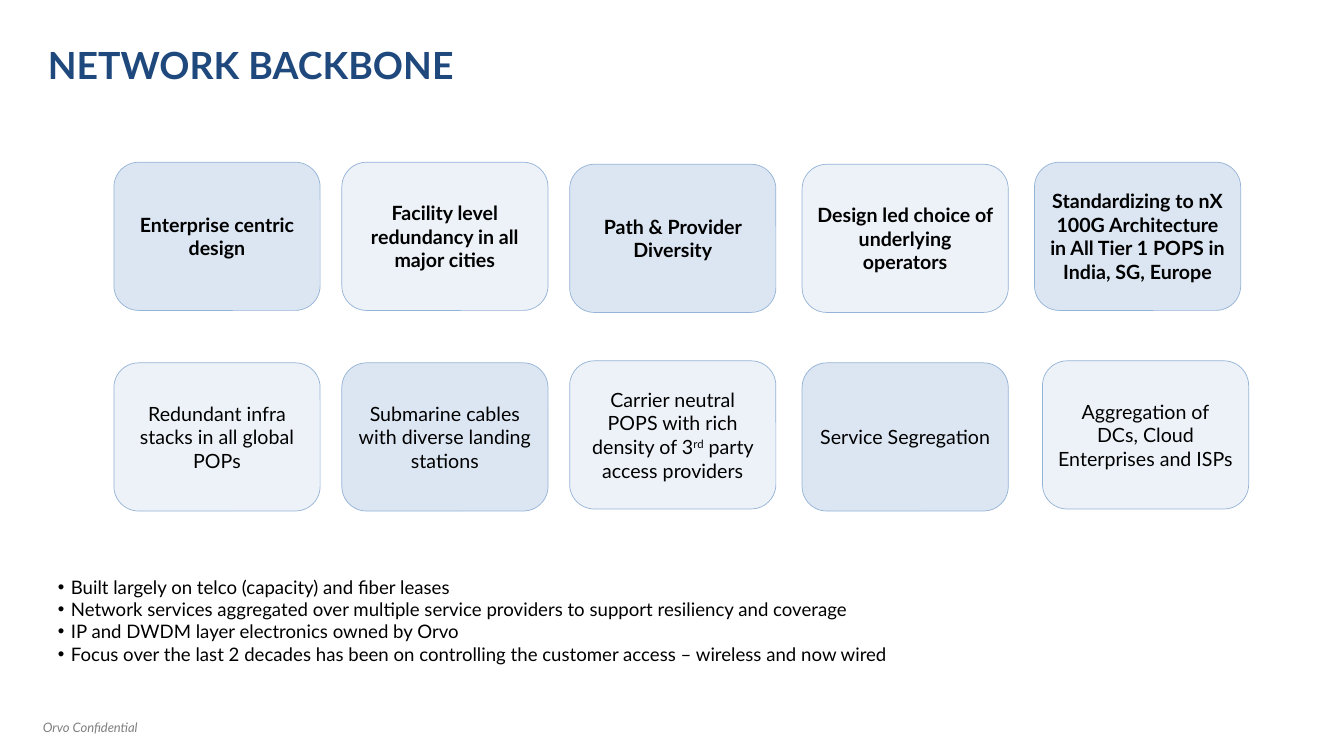
from lxml.etree import SubElement
from pptx import Presentation
from pptx.dml.color import RGBColor
from pptx.enum.shapes import MSO_SHAPE
from pptx.enum.text import MSO_ANCHOR, MSO_AUTO_SIZE, PP_ALIGN
from pptx.oxml.ns import qn
from pptx.util import Inches, Pt

COLUMN = 1.13
ROW = 0.5
CARD_COLUMNS = 1.81
CARD_ROWS = 2.94

CARDS = [
    [
        (1, 3.22, "Enterprise centric design"),
        (3, 3.22, "Facility level redundancy in all major cities"),
        (5, 3.26, "Path & Provider Diversity"),
        (7.04, 3.26, "Design led choice of underlying operators"),
        (9.08, 3.22, "Standardizing to nX 100G Architecture in All Tier 1 POPS in India, SG, Europe"),
    ],
    [
        (1, 7.2, "Redundant infra stacks in all global POPs"),
        (3, 7.2, "Submarine cables with diverse landing stations"),
        (5, 7.16, "Carrier neutral POPS with rich density of 3^rd^ party access providers"),
        (7.04, 7.2, "Service Segregation"),
        (9.15, 7.16, "Aggregation of\vDCs, Cloud Enterprises and ISPs"),
    ],
]

BULLETS = [
    "Built largely on telco (capacity) and fiber leases",
    "Network services aggregated over multiple service providers to support resiliency and coverage",
    "IP and DWDM layer electronics owned by Orvo",
    "Focus over the last 2 decades has been on controlling the customer access – wireless and now wired",
]


def color(value):
    return RGBColor.from_string(value)


class BackboneSlide:
    font_name = "Lato"
    ink = "000000"
    heading = "1F497D"
    muted = "808080"
    card_fill = "DCE6F2"
    card_line = "95B3D7"

    def __init__(self, presentation):
        self.slide = presentation.slides.add_slide(presentation.slide_layouts[5])

    def area(self, column, row, columns, rows):
        return (Inches(column * COLUMN), Inches(row * ROW),
                Inches(columns * COLUMN), Inches(rows * ROW))

    def format(self, font, size, ink, bold=False, italic=False):
        font.name = self.font_name
        font.size = Pt(size)
        font.color.rgb = color(ink)
        font.bold = bold
        font.italic = italic

    def title(self, text, *place):
        shape = self.slide.shapes.title
        shape.left, shape.top, shape.width, shape.height = self.area(*place)
        frame = shape.text_frame
        frame.text = text
        frame.auto_size = MSO_AUTO_SIZE.NONE
        frame.vertical_anchor = MSO_ANCHOR.MIDDLE
        frame.margin_left = 0
        frame.paragraphs[0].alignment = PP_ALIGN.LEFT
        self.format(frame.paragraphs[0].runs[0].font, 26.7, self.heading, bold=True)

    def card(self, text, column, row, bold, pale):
        shape = self.slide.shapes.add_shape(
            MSO_SHAPE.ROUNDED_RECTANGLE, *self.area(column, row, CARD_COLUMNS, CARD_ROWS))
        shape.shadow.inherit = False
        shape.fill.solid()
        shape.fill.fore_color.rgb = color(self.card_fill)
        if pale:
            fill_color = shape.fill._xPr.find(qn("a:solidFill"))[0]
            SubElement(fill_color, qn("a:alpha"), val="50000")
        shape.line.color.rgb = color(self.card_line)
        shape.line.width = Pt(0.5)
        frame = shape.text_frame
        frame.word_wrap = True
        frame.vertical_anchor = MSO_ANCHOR.MIDDLE
        frame.margin_left = frame.margin_right = Inches(0.06)
        frame.margin_top = frame.margin_bottom = Inches(0.06)
        paragraph = frame.paragraphs[0]
        paragraph.alignment = PP_ALIGN.CENTER
        if "^" in text:
            for index, part in enumerate(text.split("^")):
                run = paragraph.add_run()
                run.text = part
                if index % 2:
                    run._r.get_or_add_rPr().set("baseline", "30000")
        else:
            paragraph.text = text
        for run in paragraph.runs:
            self.format(run.font, 14, self.ink, bold=bold)

    def text(self, lines, place, size, ink, italic=False, bulleted=False):
        frame = self.slide.shapes.add_textbox(*self.area(*place)).text_frame
        frame.word_wrap = True
        frame.text = "\n".join(lines)
        for paragraph in frame.paragraphs:
            if bulleted:
                properties = paragraph._p.get_or_add_pPr()
                properties.set("marL", str(Inches(0.13)))
                properties.set("indent", str(Inches(-0.13)))
                SubElement(properties, qn("a:buFont"), typeface="Arial")
                SubElement(properties, qn("a:buChar"), char="•")
            for run in paragraph.runs:
                self.format(run.font, size, ink, italic=italic)


def main():
    presentation = Presentation()
    presentation.slide_width = Inches(13.33)
    presentation.slide_height = Inches(7.5)
    backbone = BackboneSlide(presentation)
    backbone.text(["Orvo Confidential"], (0.29, 14.18, 1.73, 0.52), 9.3, backbone.muted, italic=True)
    backbone.title("NETWORK BACKBONE", 0.42, 0.74, 10.96, 1.1)
    for line, cards in enumerate(CARDS):
        for position, (column, row, text) in enumerate(cards):
            backbone.card(text, column, row, bold=line == 0, pale=(line + position) % 2 == 1)
    backbone.text(BULLETS, (0.42, 11.32, 10.96, 2), 13.3, backbone.ink, bulleted=True)
    presentation.save("out.pptx")


if __name__ == "__main__":
    main()
